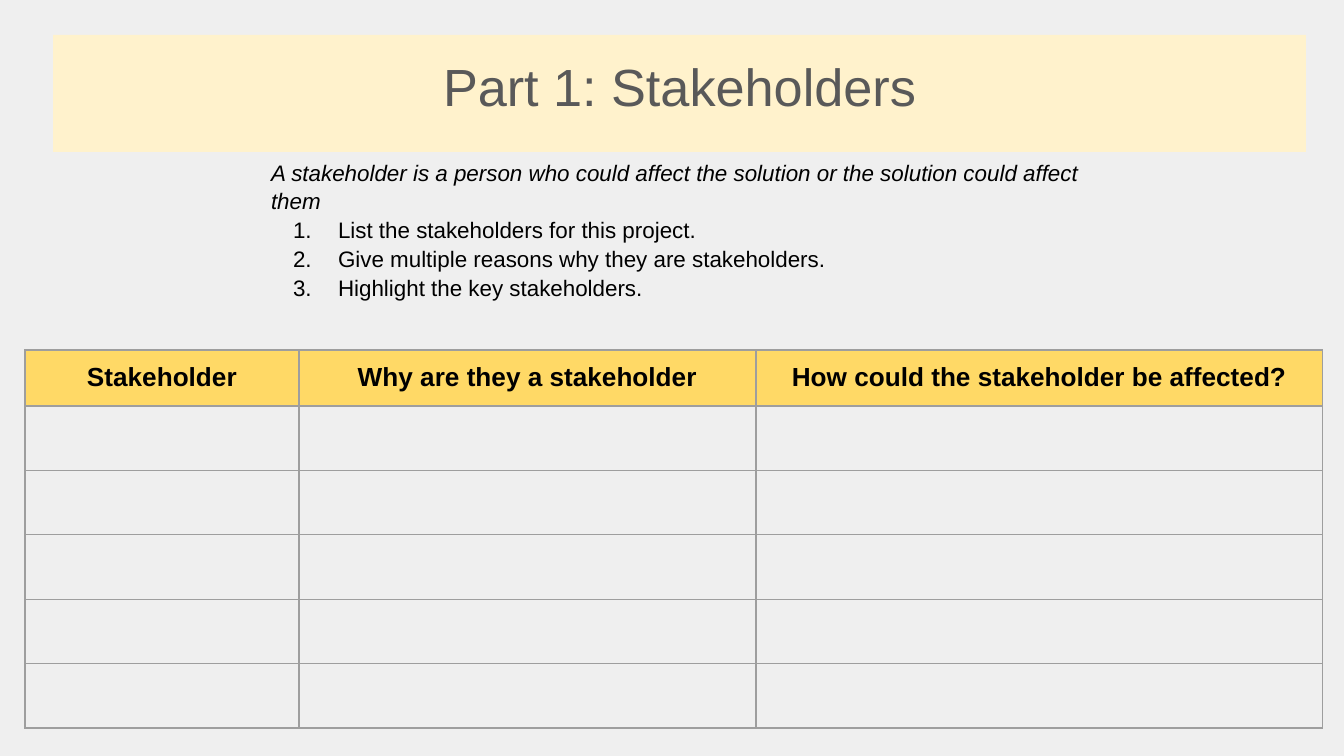
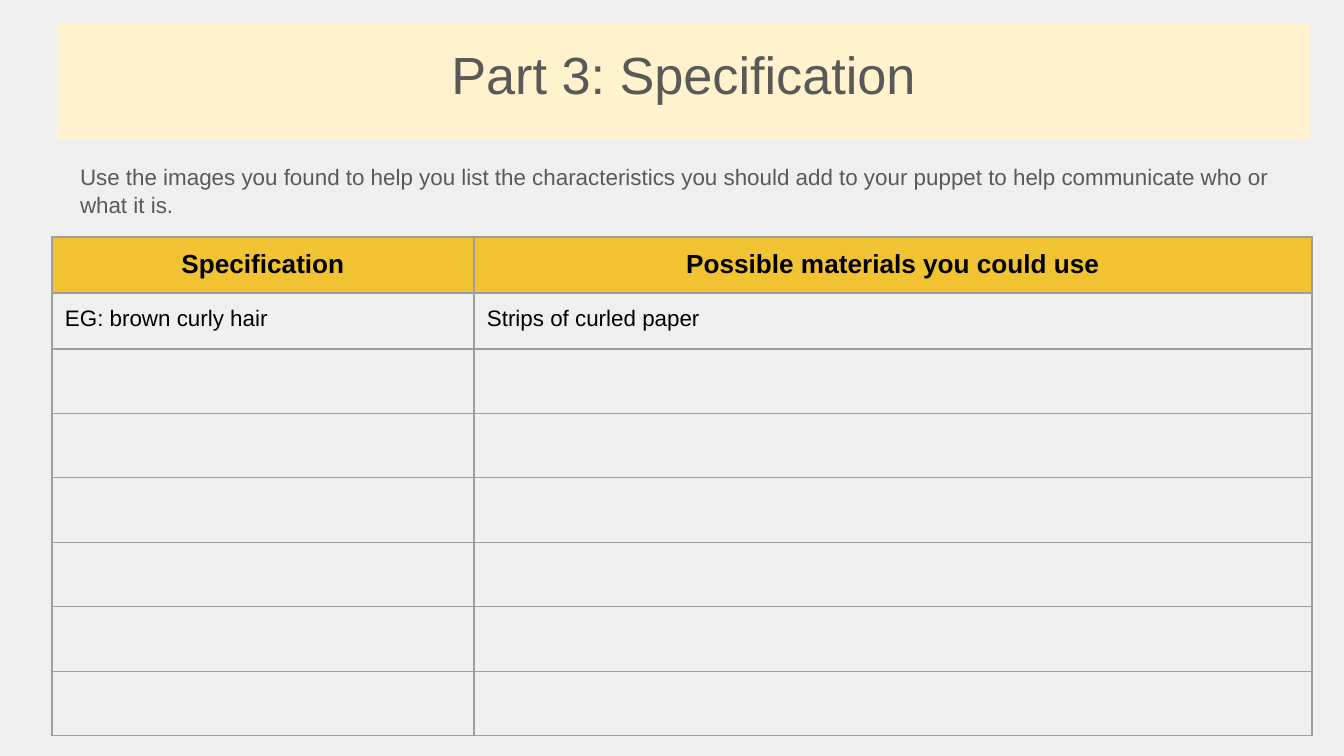
from dataclasses import dataclass
from typing import Any, NamedTuple

from lxml import etree
from pptx import Presentation
from pptx.dml.color import RGBColor
from pptx.enum.text import MSO_ANCHOR, MSO_AUTO_SIZE, PP_ALIGN
from pptx.oxml.ns import qn
from pptx.util import Emu, Pt

SLIDE_WIDTH, SLIDE_HEIGHT = 1344, 756
EMU_PER_PX = 9144000 / SLIDE_WIDTH
TOP = MSO_ANCHOR.TOP
NO_FIT = MSO_AUTO_SIZE.NONE
LEFT, CENTER = PP_ALIGN.LEFT, PP_ALIGN.CENTER
TITLE_AND_CONTENT = 1


@dataclass(frozen=True)
class Theme:
    font: str = "Arial"
    page: str = "EFEFEF"
    band: str = "FFF2CC"
    ink: str = "000000"
    muted: str = "595959"
    rule: str = "9E9E9E"
    title_size: int = 28
    header_size: int = 14
    text_size: int = 12
    title_spacing: float = 1.1
    text_spacing: float = 1.07
    rule_width: float = 0.75
    inset: int = 13
    row_height: int = 56
    number_margin: int = 67
    number_hang: int = 45


class Box(NamedTuple):
    left: int
    top: int
    width: int
    height: int


class Line(NamedTuple):
    text: str
    color: str
    italic: bool = False
    numbered: bool = False


@dataclass(frozen=True)
class Worksheet:
    left: int
    top: int
    bottom: int
    columns: tuple[int, ...]
    header_fill: str
    headers: tuple[str, ...]
    examples: tuple[tuple[str, ...], ...]
    blank_rows: int


@dataclass(frozen=True)
class Part:
    title: str
    band: Box
    instructions_box: Box
    instructions: tuple[Line, ...]
    worksheet: Worksheet


THEME = Theme()

PARTS = (
    Part(
        "Part 1: Stakeholders",
        Box(53, 35, 1253, 117),
        Box(258, 144, 874, 162),
        (
            Line("A stakeholder is a person who could affect the solution "
                 "or the solution could affect them", THEME.ink, italic=True),
            Line("List the stakeholders for this project.", THEME.ink, numbered=True),
            Line("Give multiple reasons why they are stakeholders.", THEME.ink, numbered=True),
            Line("Highlight the key stakeholders.", THEME.ink, numbered=True),
        ),
        Worksheet(
            25, 350, 728, (274, 457, 567), "FFD966",
            ("Stakeholder", "Why are they a stakeholder",
             "How could the stakeholder be affected?"),
            (), 5,
        ),
    ),
    Part(
        "Part 3: Specification",
        Box(57, 23, 1253, 117),
        Box(67, 148, 1230, 88),
        (
            Line("Use the images you found to help you list the characteristics you should "
                 "add to your puppet to help communicate who or what it is.", THEME.muted),
        ),
        Worksheet(
            52, 237, 736, (422, 838), "F1C232",
            ("Specification", "Possible materials you could use"),
            (("EG: brown curly hair", "Strips of curled paper"),), 6,
        ),
    ),
)


def px(length: float) -> Emu:
    return Emu(round(length * EMU_PER_PX))


def apply(target: Any, values: dict[str, Any]) -> None:
    for name, value in values.items():
        setattr(target, name, value)


def paint(fill: Any, color: str) -> None:
    fill.solid()
    fill.fore_color.rgb = RGBColor.from_string(color)


def margins() -> dict[str, Emu]:
    return {f"margin_{side}": px(THEME.inset) for side in ("left", "top", "right", "bottom")}


def write(paragraph: Any, text: str, size: int, color: str, spacing: float = 1.0,
          align: PP_ALIGN = LEFT, bold: bool = False, italic: bool = False) -> None:
    apply(paragraph, {"alignment": align, "line_spacing": spacing,
                      "space_before": Pt(0), "space_after": Pt(0)})
    run = paragraph.add_run()
    run.text = text
    apply(run.font, {"name": THEME.font, "size": Pt(size), "bold": bold, "italic": italic})
    run.font.color.rgb = RGBColor.from_string(color)


def place(placeholder: Any, box: Box) -> Any:
    apply(placeholder, {name: px(value) for name, value in box._asdict().items()})
    frame = placeholder.text_frame
    apply(frame, {"word_wrap": True, "auto_size": NO_FIT, "vertical_anchor": TOP, **margins()})
    return frame


def set_numbering(paragraph: Any, numbered: bool) -> None:
    properties = paragraph._p.get_or_add_pPr()
    margin, hang = (THEME.number_margin, THEME.number_hang) if numbered else (0, 0)
    properties.set("marL", str(px(margin)))
    properties.set("indent", str(-px(hang)))
    if numbered:
        etree.SubElement(properties, qn("a:buAutoNum"), type="arabicPeriod")
    else:
        etree.SubElement(properties, qn("a:buNone"))


def add_instructions(placeholder: Any, box: Box, lines: tuple[Line, ...]) -> None:
    frame = place(placeholder, box)
    for index, line in enumerate(lines):
        paragraph = frame.add_paragraph() if index else frame.paragraphs[0]
        write(paragraph, line.text, THEME.text_size, line.color,
              THEME.text_spacing, italic=line.italic)
        set_numbering(paragraph, line.numbered)


def rule_cell(cell: Any) -> None:
    properties = cell._tc.get_or_add_tcPr()
    for edge in ("a:lnL", "a:lnR", "a:lnT", "a:lnB"):
        border = etree.SubElement(properties, qn(edge), w=str(Pt(THEME.rule_width)))
        solid = etree.SubElement(border, qn("a:solidFill"))
        etree.SubElement(solid, qn("a:srgbClr"), val=THEME.rule)


def fill_cell(cell: Any, text: str, header_fill: str | None) -> None:
    apply(cell, {"vertical_anchor": TOP, **margins()})
    rule_cell(cell)
    paragraph = cell.text_frame.paragraphs[0]
    if header_fill:
        paint(cell.fill, header_fill)
        write(paragraph, text, THEME.header_size, THEME.ink, align=CENTER, bold=True)
        return
    cell.fill.background()
    if text:
        write(paragraph, text, THEME.text_size, THEME.ink)
    else:
        etree.SubElement(paragraph._p, qn("a:endParaRPr"), sz=str(THEME.text_size * 100))


def add_worksheet(slide: Any, sheet: Worksheet) -> None:
    blank = ("",) * len(sheet.columns)
    filled = (sheet.headers, *sheet.examples)
    rows = (*filled, *(blank,) * sheet.blank_rows)
    height = sheet.bottom - sheet.top
    blank_height = (height - THEME.row_height * len(filled)) / sheet.blank_rows
    table = slide.shapes.add_table(
        len(rows), len(sheet.columns), px(sheet.left), px(sheet.top),
        px(sum(sheet.columns)), px(height),
    ).table
    apply(table, {"first_row": False, "horz_banding": False})
    for column, width in zip(table.columns, sheet.columns):
        column.width = px(width)
    for index, texts in enumerate(rows):
        row = table.rows[index]
        row.height = px(THEME.row_height if index < len(filled) else blank_height)
        for cell, text in zip(row.cells, texts):
            fill_cell(cell, text, None if index else sheet.header_fill)


def add_part(deck: Any, part: Part) -> None:
    slide = deck.slides.add_slide(deck.slide_layouts[TITLE_AND_CONTENT])
    title, instructions = slide.placeholders
    heading = place(title, part.band).paragraphs[0]
    paint(title.fill, THEME.band)
    write(heading, part.title, THEME.title_size, THEME.muted, THEME.title_spacing, CENTER)
    add_instructions(instructions, part.instructions_box, part.instructions)
    add_worksheet(slide, part.worksheet)


def main() -> None:
    deck = Presentation()
    apply(deck, {"slide_width": px(SLIDE_WIDTH), "slide_height": px(SLIDE_HEIGHT)})
    paint(deck.slide_master.background.fill, THEME.page)
    for part in PARTS:
        add_part(deck, part)
    deck.save("out.pptx")


if __name__ == "__main__":
    main()
